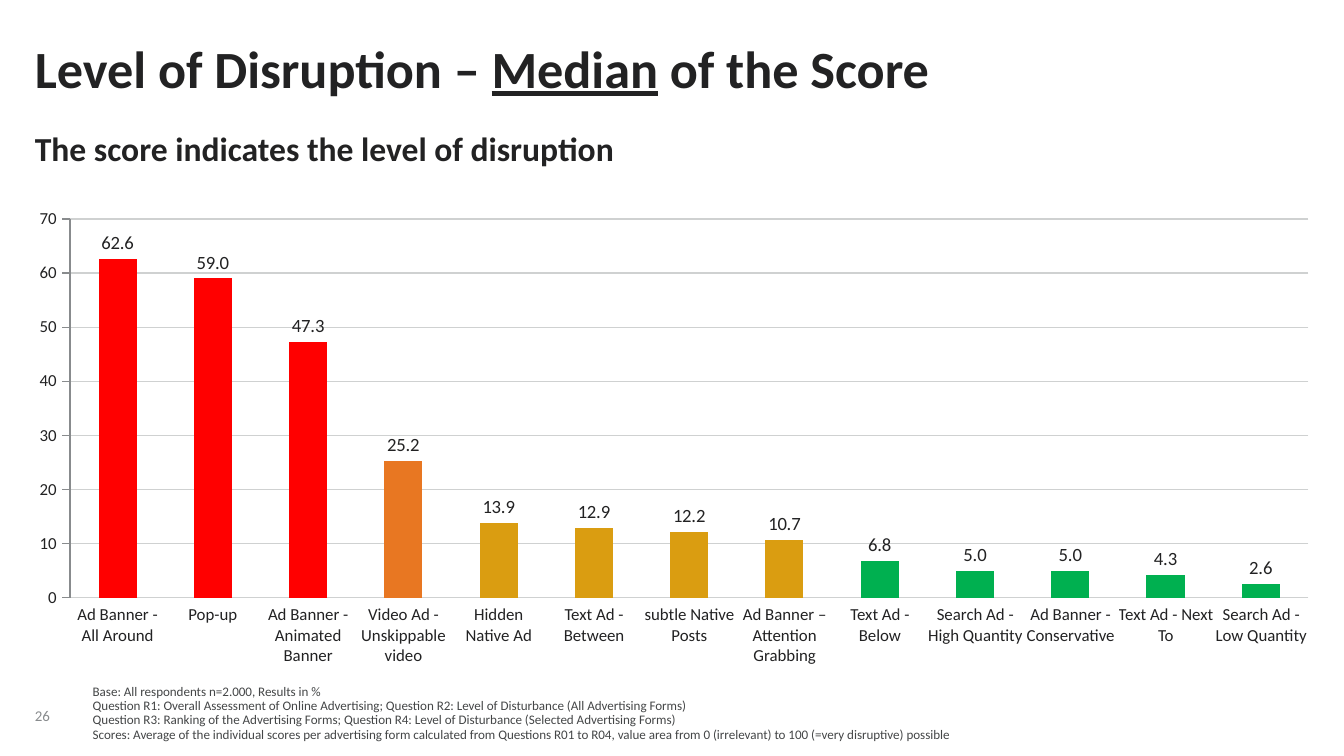
import pptx
import pptx.chart.data
import pptx.dml.color
import pptx.enum.chart
import pptx.enum.shapes
import pptx.enum.text
import pptx.oxml
import pptx.oxml.ns
import pptx.util

Pt = pptx.util.Pt
ALIGN = pptx.enum.text.PP_ALIGN
ANCHOR = pptx.enum.text.MSO_ANCHOR
FONT = "Calibri"
COLORS = {
    "text": "222223", "note": "444647", "page": "888B8D",
    "grid": "CFD1D1", "axis": "888B8D",
    "high": "FF0000", "strong": "E87722", "mid": "DA9D11", "low": "00B050",
}

TITLE = [("Level of Disruption – ", False), ("Median", True), (" of the Score", False)]
SUBTITLE = "The score indicates the level of disruption"
PAGE = "26"
# advertising form, median score, level
SCORES = [
    ("Ad Banner - All Around", 62.6, "high"),
    ("Pop-up", 59, "high"),
    ("Ad Banner - Animated Banner", 47.3, "high"),
    ("Video Ad - Unskippable video", 25.2, "strong"),
    ("Hidden\nNative Ad", 13.9, "mid"),
    ("Text Ad - Between", 12.9, "mid"),
    ("subtle Native Posts", 12.2, "mid"),
    ("Ad Banner – Attention Grabbing", 10.7, "mid"),
    ("Text Ad - Below", 6.8, "low"),
    ("Search Ad - High Quantity", 5, "low"),
    ("Ad Banner - Conservative", 5, "low"),
    ("Text Ad - Next To", 4.3, "low"),
    ("Search Ad - Low Quantity", 2.6, "low"),
]
NOTES = [
    "Base: All respondents n=2.000, Results in %",
    "Question R1: Overall Assessment of Online Advertising; "
    "Question R2: Level of Disturbance (All Advertising Forms)",
    "Question R3: Ranking of the Advertising Forms; "
    "Question R4: Level of Disturbance (Selected Advertising Forms)",
    "Scores: Average of the individual scores per advertising form calculated from "
    "Questions R01 to R04, value area from 0 (irrelevant) to 100 (=very disruptive) possible",
]
PLOT = {"x": 0.027, "y": 0.081, "w": 0.954, "h": 0.762}  # shares of the chart frame


def rgb(name):
    return pptx.dml.color.RGBColor.from_string(COLORS[name])


def style(font, size, color="text", bold=False):
    font.name, font.size, font.bold = FONT, Pt(size), bold
    font.color.rgb = rgb(color)


def add_run(para, text, size, color="text", bold=False):
    run = para.add_run()
    run.text = text
    style(run.font, size, color, bold)
    return run


def add_box(slide, left, top, width, height, anchor=ANCHOR.TOP, wrap=True):
    box = slide.shapes.add_textbox(Pt(left), Pt(top), Pt(width), Pt(height))
    frame = box.text_frame
    frame.margin_left = frame.margin_right = frame.margin_top = frame.margin_bottom = 0
    frame.vertical_anchor, frame.word_wrap = anchor, wrap
    return frame


def add_scores(slide):
    """Column chart of the scores, coloured by level."""
    data = pptx.chart.data.CategoryChartData()
    data.categories = [str(i + 1) for i in range(len(SCORES))]
    data.add_series("Series 1", [score for _, score, _ in SCORES])
    chart = slide.shapes.add_chart(
        pptx.enum.chart.XL_CHART_TYPE.COLUMN_CLUSTERED,
        Pt(18.72), Pt(95.76), Pt(695.5), Pt(266.4), data).chart
    chart.has_legend = chart.has_title = False
    style(chart.font, 10)

    chart.category_axis.visible = False
    axis = chart.value_axis
    axis.minimum_scale, axis.maximum_scale, axis.major_unit = 0, 70, 10
    axis.major_tick_mark = pptx.enum.chart.XL_TICK_MARK.OUTSIDE
    axis.tick_labels.number_format = "0"
    axis.tick_labels.number_format_is_linked = False
    style(axis.tick_labels.font, 9)
    axis.format.line.color.rgb = rgb("axis")
    grid = axis.major_gridlines.format.line
    grid.color.rgb, grid.width = rgb("grid"), Pt(0.75)

    plot = chart.plots[0]
    plot.gap_width, plot.vary_by_categories = 150, False
    plot.has_data_labels = True
    labels = plot.data_labels
    labels.show_value = True
    labels.number_format, labels.number_format_is_linked = "0.0", False
    labels.position = pptx.enum.chart.XL_LABEL_POSITION.OUTSIDE_END
    style(labels.font, 10)
    for i, (_, _, level) in enumerate(SCORES):
        fill = plot.series[0].points[i].format.fill
        fill.solid()
        fill.fore_color.rgb = rgb(level)

    area = chart._chartSpace.chart.plotArea
    for old in area.findall(pptx.oxml.ns.qn("c:layout")):
        area.remove(old)
    parts = "".join(f'<c:{k} val="{v}"/>' for k, v in PLOT.items())
    area.insert(0, pptx.oxml.parse_xml(
        f'<c:layout {pptx.oxml.ns.nsdecls("c")}><c:manualLayout>'
        '<c:layoutTarget val="inner"/><c:xMode val="edge"/><c:yMode val="edge"/>'
        f'{parts}</c:manualLayout></c:layout>'))


def add_names(slide):
    """One-row table naming the columns of the chart."""
    table = slide.shapes.add_table(
        1, len(SCORES), Pt(37.44), Pt(324), Pt(663.84), Pt(29.5)).table
    table.first_row = table.horz_banding = False
    for cell, (name, _, _) in zip(table.iter_cells(), SCORES):
        cell.fill.background()
        cell.margin_left = cell.margin_right = cell.margin_top = cell.margin_bottom = 0
        para = cell.text_frame.paragraphs[0]
        para.alignment = ALIGN.CENTER
        for i, line in enumerate(name.split("\n")):
            if i:
                para.add_line_break()
            add_run(para, line, 9)


def main():
    deck = pptx.Presentation()
    deck.slide_width, deck.slide_height = Pt(720), Pt(405)
    slide = deck.slides.add_slide(deck.slide_layouts[6])

    page = add_box(slide, 18.72, 369.36, 24.48, 18.72, ANCHOR.BOTTOM, False)
    add_run(page.paragraphs[0], PAGE, 8, "page")
    add_scores(slide)

    title = add_box(slide, 18.72, 19.44, 602.64, 66.24).paragraphs[0]
    for text, under in TITLE:
        add_run(title, text, 28, bold=True).font.underline = under
    sub = add_box(slide, 18.72, 68.4, 665.28, 18)
    add_run(sub.paragraphs[0], SUBTITLE, 18, bold=True)
    add_names(slide)

    notes = add_box(slide, 49.68, 365.04, 482.4, 32.4, ANCHOR.BOTTOM)
    for i, line in enumerate(NOTES):
        para = notes.add_paragraph() if i else notes.paragraphs[0]
        para.line_spacing = 0.9
        add_run(para, line, 7, "note")

    deck.save("out.pptx")


if __name__ == "__main__":
    main()
